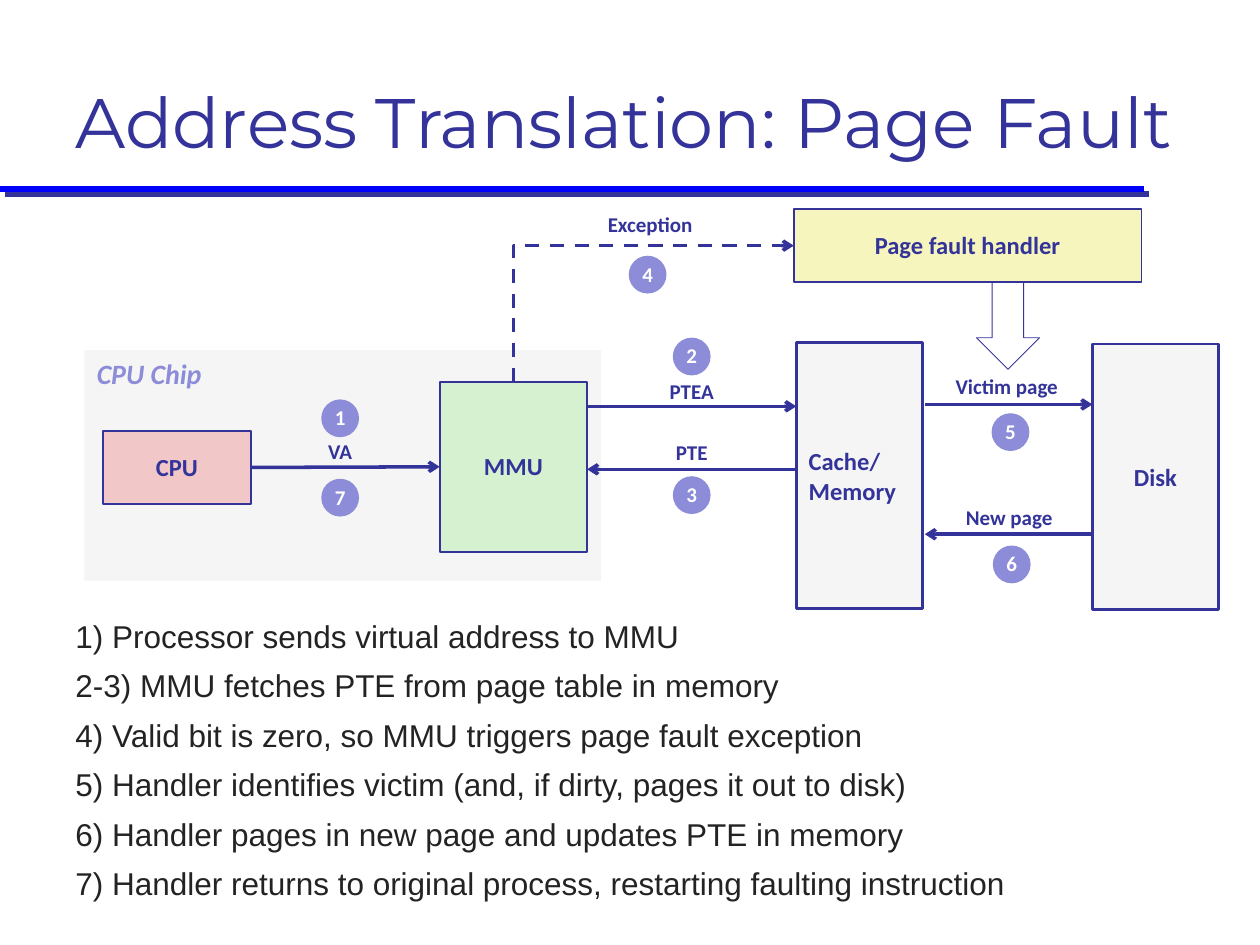
import pptx
import pptx.dml.color
import pptx.enum.dml
import pptx.enum.shapes
import pptx.enum.text
import pptx.oxml
import pptx.oxml.ns
import pptx.util

SHAPE = pptx.enum.shapes.MSO_SHAPE
CONNECTOR = pptx.enum.shapes.MSO_CONNECTOR
ANCHOR = pptx.enum.text.MSO_ANCHOR
ALIGN = pptx.enum.text.PP_ALIGN
TOP, LEFT, BOTTOM, RIGHT = range(4)

# The slide is a grid of 100 columns by 75 rows with square cells
COLUMNS, ROWS = 100, 75
CELL = pptx.util.Inches(0.1)

COLORS = {
    "ink": "333399", "rule": "0000FF", "body": "232323", "badge": "8C8CD9",
    "white": "FFFFFF", "gray": "F5F5F5", "green": "D5F1CF",
    "red": "F1C7C7", "yellow": "F6F5BD",
}

STEPS = [
    "1) Processor sends virtual address to MMU",
    "2-3) MMU fetches PTE from page table in memory",
    "4) Valid bit is zero, so MMU triggers page fault exception",
    "5) Handler identifies victim (and, if dirty, pages it out to disk)",
    "6) Handler pages in new page and updates PTE in memory",
    "7) Handler returns to original process, restarting faulting instruction",
]


def cells(*counts):
    return [round(count * CELL) for count in counts]


def color(name):
    return pptx.dml.color.RGBColor.from_string(COLORS[name])


def write(shape, lines, size, ink="ink", font="Calibri", bold=True, italic=False,
          align=ALIGN.CENTER, anchor=ANCHOR.MIDDLE, wrap=False, spacing=None, before=0):
    frame = shape.text_frame
    frame.word_wrap = wrap
    frame.vertical_anchor = anchor
    for index, line in enumerate(lines):
        para = frame.paragraphs[0] if index == 0 else frame.add_paragraph()
        para.alignment = align
        para.line_spacing = spacing
        para.space_before = pptx.util.Pt(before)
        span = para.add_run()
        span.text = line
        span.font.size = pptx.util.Pt(size)
        span.font.name = font
        span.font.bold = bold
        span.font.italic = italic
        span.font.color.rgb = color(ink)


def add_text(page, area, lines, size, **style):
    box = page.shapes.add_textbox(*cells(*area))
    write(box, lines, size, **style)


def add_block(page, area, fill=None, border=None, kind=SHAPE.RECTANGLE):
    block = page.shapes.add_shape(kind, *cells(*area))
    block.shadow.inherit = False
    if fill:
        block.fill.solid()
        block.fill.fore_color.rgb = color(fill)
    else:
        block.fill.background()
    if border:
        block.line.color.rgb = color("ink")
        block.line.width = pptx.util.Pt(border)
    else:
        block.line.fill.background()
    return block


def add_unit(page, area, fill, lines, border=1, **style):
    unit = add_block(page, area, fill, border)
    write(unit, lines, 14, **style)
    return unit


def add_label(page, center, top, width, text):
    add_text(page, (center - width / 2, top, width, 3), [text], 12, spacing=0.98)


def add_badge(page, center, top, number):
    badge = add_block(page, (center - 1.5, top, 3, 3), "badge", kind=SHAPE.OVAL)
    write(badge, [str(number)], 12, ink="white", spacing=0.98)


def add_line(page, start, end, ink="ink", width=2, kind=CONNECTOR.STRAIGHT,
             arrow=True, dashed=False):
    line = page.shapes.add_connector(kind, *cells(*start, *end))
    line.line.color.rgb = color(ink)
    line.line.width = pptx.util.Pt(width)
    if dashed:
        line.line.dash_style = pptx.enum.dml.MSO_LINE.DASH
    if arrow:
        tail = pptx.oxml.parse_xml(
            f'<a:tailEnd {pptx.oxml.ns.nsdecls("a")} type="arrow"/>')
        line.line._get_or_add_ln().append(tail)
    effects = pptx.oxml.parse_xml(f'<a:effectLst {pptx.oxml.ns.nsdecls("a")}/>')
    line._element.spPr.append(effects)
    return line, effects


def add_rule(page):
    effects = add_line(page, (0, 15), (90.8, 15), "rule", 3.5, arrow=False)[1]
    effects.append(pptx.oxml.parse_xml(
        f'<a:outerShdw {pptx.oxml.ns.nsdecls("a")} dist="{pptx.util.Pt(4.2)}" '
        f'dir="2700000" algn="ctr" rotWithShape="0">'
        f'<a:srgbClr val="{COLORS["ink"]}"/></a:outerShdw>'))


def add_corner_arrow(page, source, target):
    """Dashed arrow going up from the source's top, then right to the target."""
    corner = add_line(page, (0, 0), (1, 1), kind=CONNECTOR.ELBOW, dashed=True)[0]
    corner.begin_connect(source, TOP)
    corner.end_connect(target, LEFT)
    start_x, start_y = source.left + source.width // 2, source.top
    end_x, end_y = target.left, target.top + target.height // 2
    across, rise = end_x - start_x, start_y - end_y
    # The outline is turned a quarter, so width and height trade places
    corner.width, corner.height = rise, across
    corner.left = (start_x + end_x - rise) // 2
    corner.top = (start_y + end_y - across) // 2
    frame = corner._element.spPr.find(pptx.oxml.ns.qn("a:xfrm"))
    for key, value in (("rot", "5400000"), ("flipH", "1"), ("flipV", "1")):
        frame.set(key, value)
    outline = corner._element.spPr.find(pptx.oxml.ns.qn("a:prstGeom"))
    outline.set("prst", "bentConnector2")


def add_diagram(page):
    # Chip and units
    add_block(page, (6.7, 27.8, 41, 18.3), "gray")
    add_text(page, (6.7, 27.8, 11, 3.7), ["CPU Chip"], 16, ink="badge", italic=True,
             align=ALIGN.LEFT, anchor=ANCHOR.TOP)
    mmu = add_unit(page, (34.9, 30.3, 11.7, 13.5), "green", ["MMU"], spacing=0.98)
    cpu = add_unit(page, (8.2, 34.2, 11.7, 5.8), "red", ["CPU"], spacing=0.98)
    handler = add_unit(page, (63, 16.6, 27.6, 5.8), "yellow", ["Page fault handler"],
                       spacing=0.98)
    add_unit(page, (63.2, 27.2, 10, 21.1), "gray", ["Cache/", "Memory"], 1.5,
             align=ALIGN.LEFT)
    add_unit(page, (86.7, 27.3, 10, 21.1), "gray", ["Disk"], 1.5)

    # Arrows
    request = add_line(page, (19.9, 37.1), (34.9, 37.1))[0]
    request.begin_connect(cpu, RIGHT)
    request.end_connect(mmu, LEFT)
    add_line(page, (46.6, 32.25), (63.2, 32.25))
    add_line(page, (63.2, 37.25), (46.6, 37.25))
    add_line(page, (73.4, 32.1), (86.7, 32.1))
    add_line(page, (86.7, 42.4), (73.4, 42.4))
    add_corner_arrow(page, mmu, handler)
    add_block(page, (77.5, 22.4, 5, 6.9), border=0.5, kind=SHAPE.DOWN_ARROW)

    # Labels: center, top, width, text
    for label in ((27, 34.4, 4, "VA"), (54.9, 29.6, 5.6, "PTEA"),
                  (54.9, 34.5, 4.5, "PTE"), (79.9, 29.2, 10.2, "Victim page"),
                  (80.1, 39.6, 9, "New page"), (51.6, 16.4, 8.8, "Exception")):
        add_label(page, *label)

    # Step badges in order: center, top
    spots = ((27, 31.7), (54.9, 26.8), (54.9, 37.8), (51.4, 20.3),
             (80.2, 32.8), (80.3, 43.3), (27, 38))
    for number, (center, top) in enumerate(spots, start=1):
        add_badge(page, center, top, number)


def main():
    deck = pptx.Presentation()
    deck.slide_width, deck.slide_height = cells(COLUMNS, ROWS)
    page = deck.slides.add_slide(deck.slide_layouts[6])

    # Heading
    add_rule(page)
    add_text(page, (5, 4.8, 95.3, 8.6), ["Address Translation: Page Fault"], 40,
             font="Montserrat", bold=False, align=ALIGN.LEFT,
             anchor=ANCHOR.BOTTOM, wrap=True)
    add_diagram(page)
    # Explanation of the steps
    add_text(page, (5, 49.2, 87.5, 22.5), STEPS, 18, ink="body", font="Arial",
             bold=False, align=ALIGN.LEFT, anchor=ANCHOR.TOP, wrap=True,
             spacing=0.73, before=12.5)
    deck.save("out.pptx")


if __name__ == "__main__":
    main()
